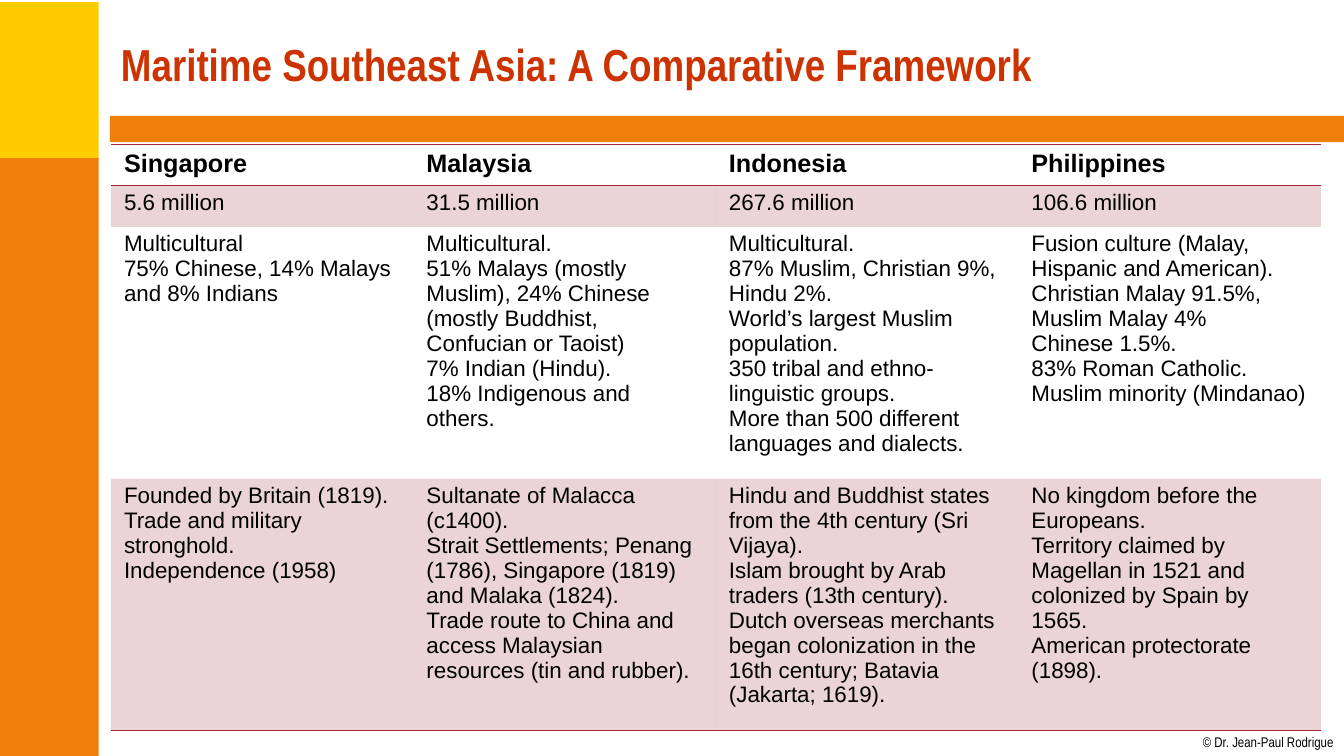
import pptx
import pptx.util
import pptx.dml.color
import pptx.enum.shapes
import pptx.enum.text
import pptx.oxml
import pptx.oxml.ns

Inches = pptx.util.Inches
Pt = pptx.util.Pt
RGBColor = pptx.dml.color.RGBColor

YELLOW = RGBColor(0xFF, 0xCC, 0x00)
ORANGE = RGBColor(0xF0, 0x7F, 0x09)
RED = RGBColor(0xCC, 0x33, 0x00)
WINE = RGBColor(0x9F, 0x29, 0x36)
BLACK = RGBColor(0x00, 0x00, 0x00)
NO_STYLE = "{2D5ABB26-0587-4C30-8999-92F81FD0307C}"

COLUMN_WIDTH = 3
ROW_HEIGHTS = [0.41, 0.41, 2.32, 2.32]
TABLE_LEFT, TABLE_TOP = 1.1, 1.43
RULED_EDGES = {0: ["lnT", "lnB"], 3: ["lnB"]}
BANDED_ROWS = [1, 3]

COUNTRIES = [
    [
        "Singapore",
        "5.6 million",
        "Multicultural\n75% Chinese, 14% Malays and 8% Indians",
        "Founded by Britain (1819).\nTrade and military stronghold.\nIndependence (1958)",
    ],
    [
        "Malaysia",
        "31.5 million",
        "Multicultural.\n"
        "51% Malays (mostly Muslim), 24% Chinese (mostly Buddhist, Confucian or Taoist)\n"
        "7% Indian (Hindu).\n18% Indigenous and others.",
        "Sultanate of Malacca (c1400).\n"
        "Strait Settlements; Penang (1786), Singapore (1819) and Malaka (1824).\n"
        "Trade route to China and access Malaysian resources (tin and rubber).",
    ],
    [
        "Indonesia",
        "267.6 million",
        "Multicultural.\n87% Muslim, Christian 9%, Hindu 2%.\n"
        "World’s largest Muslim population.\n350 tribal and ethno-linguistic groups.\n"
        "More than 500 different languages and dialects.",
        "Hindu and Buddhist states from the 4th century (Sri Vijaya).\n"
        "Islam brought by Arab traders (13th century).\n"
        "Dutch overseas merchants began colonization in the 16th century; "
        "Batavia (Jakarta; 1619).",
    ],
    [
        "Philippines",
        "106.6 million",
        "Fusion culture (Malay, Hispanic and American).\nChristian Malay 91.5%,\n"
        "Muslim Malay 4%\nChinese 1.5%.\n83% Roman Catholic.\nMuslim minority (Mindanao)",
        "No kingdom before the Europeans.\n"
        "Territory claimed by Magellan in 1521 and colonized by Spain by 1565.\n"
        "American protectorate (1898).",
    ],
]


def style_text(frame, font_name, size, color, bold=False):
    for para in frame.paragraphs:
        for span in para.runs:
            span.font.name = font_name
            span.font.size = Pt(size)
            span.font.bold = bold
            span.font.color.rgb = color


def rule_cell(cell, edges):
    properties = cell._tc.get_or_add_tcPr()
    for position, edge in enumerate(edges):
        properties.insert(position, pptx.oxml.parse_xml(
            f'<a:{edge} {pptx.oxml.ns.nsdecls("a")} w="12700"><a:solidFill>'
            f'<a:srgbClr val="{WINE}"/></a:solidFill></a:{edge}>'))


deck = pptx.Presentation()
deck.slide_width = Inches(13.33)
deck.slide_height = Inches(7.5)
page = deck.slides.add_slide(deck.slide_layouts[5])

for left, top, width, height, color in [
    (-0.02, 0.02, 1, 1.58, YELLOW),
    (-0.02, 1.57, 1, 5.93, ORANGE),
    (1.09, 1.15, 12.24, 0.26, ORANGE),
]:
    band = page.shapes.add_shape(
        pptx.enum.shapes.MSO_SHAPE.RECTANGLE,
        Inches(left), Inches(top), Inches(width), Inches(height))
    band.shadow.inherit = False
    band.fill.solid()
    band.fill.fore_color.rgb = color
    band.line.fill.background()

credit = page.shapes.add_textbox(Inches(11.93), Inches(7.28), Inches(1.31), Inches(0.17))
frame = credit.text_frame
frame.margin_left = frame.margin_right = frame.margin_top = frame.margin_bottom = 0
frame.word_wrap = False
frame.text = "© Dr. Jean-Paul Rodrigue"
style_text(frame, "Arial Narrow", 10, BLACK)

title = page.shapes.title
title.left, title.top = Inches(1.1), Inches(0.11)
title.width, title.height = Inches(12), Inches(1.04)
title.text_frame.text = "Maritime Southeast Asia: A Comparative Framework"
title.text_frame.vertical_anchor = pptx.enum.text.MSO_ANCHOR.MIDDLE
title.text_frame.paragraphs[0].alignment = pptx.enum.text.PP_ALIGN.LEFT
style_text(title.text_frame, "Arial Narrow", 32, RED, True)

table = page.shapes.add_table(
    len(ROW_HEIGHTS), len(COUNTRIES), Inches(TABLE_LEFT), Inches(TABLE_TOP),
    Inches(COLUMN_WIDTH * len(COUNTRIES)), Inches(sum(ROW_HEIGHTS))).table
table._tbl.tblPr.find(pptx.oxml.ns.qn("a:tableStyleId")).text = NO_STYLE
table.horz_banding = False

for row, height in zip(table.rows, ROW_HEIGHTS):
    row.height = Inches(height)

for column, country in enumerate(COUNTRIES):
    table.columns[column].width = Inches(COLUMN_WIDTH)
    for row, words in enumerate(country):
        cell = table.cell(row, column)
        cell.margin_left = cell.margin_right = Inches(0.13)
        cell.margin_top = cell.margin_bottom = Inches(0.05)
        cell.text_frame.text = words
        header = row == 0
        style_text(cell.text_frame, "Arial", 18 if header else 16, BLACK, header)
        if row in BANDED_ROWS:
            cell.fill.solid()
            cell.fill.fore_color.rgb = WINE
            tint = cell._tc.tcPr.find(".//" + pptx.oxml.ns.qn("a:srgbClr"))
            tint.append(pptx.oxml.parse_xml(
                f'<a:alpha {pptx.oxml.ns.nsdecls("a")} val="20000"/>'))
        else:
            cell.fill.background()
        rule_cell(cell, RULED_EDGES.get(row, []))

deck.save("out.pptx")
